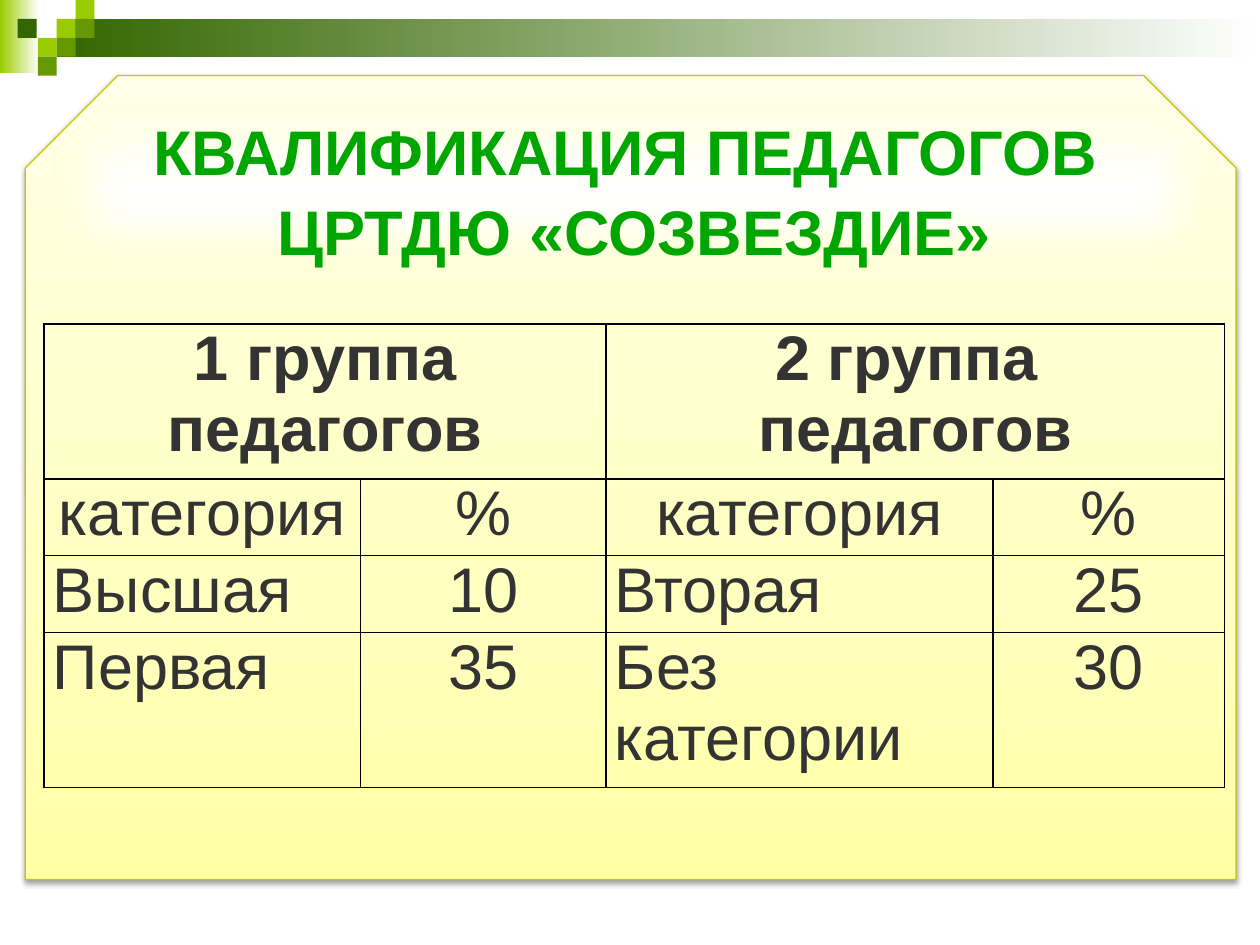
from dataclasses import dataclass
from typing import Optional

from lxml.etree import fromstring
from pptx import Presentation
from pptx.dml.color import RGBColor
from pptx.enum.shapes import MSO_SHAPE as Shape
from pptx.enum.text import MSO_ANCHOR as Anchor, MSO_AUTO_SIZE as AutoSize, PP_ALIGN as Align
from pptx.util import Emu, Inches, Pt

DRAWING_NS = 'xmlns:a="http://schemas.openxmlformats.org/drawingml/2006/main"'


@dataclass(frozen=True)
class Theme:
    """Colours, font and sizes of the slide."""
    lime: str = "99CC00"
    green: str = "669900"
    forest: str = "336600"
    white: str = "FFFFFF"
    panel_line: str = "C8C800"
    panel_stops: tuple = ((0, "FFFFA5"), (35, "FFFFBF"), (100, "FFFFE7"))
    title: str = "00A600"
    title_outline: str = "001F00"
    text: str = "333333"
    border: str = "000000"
    font: str = "Arial"
    size: int = 36


@dataclass(frozen=True)
class Block:
    """A rectangle of the header ornament, fading to white when asked."""
    left: float
    top: float
    width: float
    height: float
    color: str
    fades: bool = False


@dataclass(frozen=True)
class Entry:
    """One table cell's wording and look."""
    text: str
    align: Align = Align.CENTER
    bold: bool = False
    span: int = 1


THEME = Theme()
SQUARE = 0.15
BLOCKS = [
    Block(0, 0, 0.31, 0.58, THEME.lime, True),
    Block(0.45, 0.15, 9.55, 0.3, THEME.forest, True),
] + [
    Block(left, row * SQUARE, SQUARE, SQUARE, color)
    for left, row, color in [
        (0.45, 1, THEME.lime), (0.6, 0, THEME.lime), (0.6, 1, THEME.green),
        (0.3, 2, THEME.lime), (0.14, 1, THEME.forest), (0.45, 2, THEME.green),
        (0.3, 3, THEME.green),
    ]
]
COLUMNS = [2.51, 1.95, 3.07, 1.84]
ROWS = [1.23, 0.61, 0.61, 1.23]
ENTRIES: list[list[Optional[Entry]]] = [
    [Entry("1 группа педагогов", bold=True, span=2), None,
     Entry("2 группа \nпедагогов", bold=True, span=2), None],
    [Entry("категория"), Entry("%")] * 2,
    [Entry("Высшая", Align.LEFT), Entry("10"), Entry("Вторая", Align.LEFT), Entry("25")],
    [Entry("Первая", Align.LEFT), Entry("35"), Entry("Без категории", Align.LEFT), Entry("30")],
]


def drawing_xml(tag: str, attributes: str = "", content: str = ""):
    """Return a DrawingML element."""
    return fromstring(f"<a:{tag} {DRAWING_NS} {attributes}>{content}</a:{tag}>")


def solid_xml(color: str) -> str:
    """Return the markup of a solid fill."""
    return f'<a:solidFill><a:srgbClr val="{color}"/></a:solidFill>'


def apply_gradient(shape, stops: tuple, angle: int) -> None:
    """Fill a new shape with a linear gradient."""
    markup = "".join(
        f'<a:gs pos="{position * 1000}"><a:srgbClr val="{color}"/></a:gs>'
        for position, color in stops
    )
    content = f'<a:gsLst>{markup}</a:gsLst><a:lin ang="{angle * 60000}" scaled="0"/>'
    shape.element.spPr.insert(2, drawing_xml("gradFill", 'rotWithShape="1"', content))


def style_paragraph(paragraph, align: Align, color: str, bold: bool) -> None:
    """Align a paragraph and format its runs."""
    paragraph.alignment = align
    for run in paragraph.runs:
        run.font.name = THEME.font
        run.font.size = Pt(THEME.size)
        run.font.bold = bold
        run.font.color.rgb = RGBColor.from_string(color)


def add_block(slide, block: Block) -> None:
    """Draw one rectangle of the ornament."""
    shape = slide.shapes.add_shape(
        Shape.RECTANGLE, Inches(block.left), Inches(block.top),
        Inches(block.width), Inches(block.height))
    if block.fades:
        apply_gradient(shape, ((0, block.color), (100, THEME.white)), 0)
    else:
        shape.fill.solid()
        shape.fill.fore_color.rgb = RGBColor.from_string(block.color)
    shape.line.fill.background()
    shape.shadow.inherit = False


def add_panel(slide) -> None:
    """Draw the yellow panel with snipped top corners."""
    panel = slide.shapes.add_shape(
        Shape.SNIP_2_SAME_RECTANGLE, Inches(0.2), Inches(0.6), Inches(9.61), Inches(6.38))
    panel.adjustments[0] = 0.115
    panel.adjustments[1] = 0
    apply_gradient(panel, THEME.panel_stops, 270)
    panel.line.color.rgb = RGBColor.from_string(THEME.panel_line)
    panel.line.width = Pt(0.75)
    shadow = (f'<a:outerShdw blurRad="{Pt(3.1)}" dist="{Pt(1.6)}" dir="5400000" rotWithShape="0">'
              '<a:srgbClr val="000000"><a:alpha val="38000"/></a:srgbClr></a:outerShdw>')
    panel.element.spPr.append(drawing_xml("effectLst", content=shadow))


def place_title(slide) -> None:
    """Put the title on a soft white band above the panel."""
    title = slide.shapes.title
    title.element.getparent().append(title.element)
    title.left, title.top = Inches(0.43), Inches(0.84)
    title.width, title.height = Inches(9.21), Inches(1.31)
    title.fill.solid()
    title.fill.fore_color.rgb = RGBColor.from_string(THEME.white)
    title.line.color.rgb = RGBColor.from_string(THEME.green)
    title.line.width = Pt(2)
    soft_edge = f'<a:softEdge rad="{Pt(25)}"/>'
    title.element.spPr.append(drawing_xml("effectLst", content=soft_edge))
    frame = title.text_frame
    frame.text = "КВАЛИФИКАЦИЯ ПЕДАГОГОВ \nЦРТДЮ «СОЗВЕЗДИЕ»"
    frame.auto_size = AutoSize.NONE
    frame.vertical_anchor = Anchor.MIDDLE
    for paragraph in frame.paragraphs:
        paragraph.line_spacing = 1.05
        style_paragraph(paragraph, Align.CENTER, THEME.title, True)
        for run in paragraph.runs:
            outline = drawing_xml("ln", f'w="{Pt(0.71)}"', solid_xml(THEME.title_outline))
            run.font._element.insert(0, outline)


def style_cell(cell) -> None:
    """Give a cell thin borders, narrow margins and no fill."""
    cell.margin_left = cell.margin_right = Inches(0.07)
    cell.margin_top = cell.margin_bottom = Emu(0)
    cell.fill.background()
    properties = cell._tc.get_or_add_tcPr()
    for index, side in enumerate(("lnL", "lnR", "lnT", "lnB")):
        properties.insert(index, drawing_xml(side, f'w="{Pt(1)}"', solid_xml(THEME.border)))


def add_category_table(slide) -> None:
    """Add the table of teachers' categories."""
    table = slide.shapes.add_table(
        len(ROWS), len(COLUMNS), Inches(0.35), Inches(2.57),
        Inches(sum(COLUMNS)), Inches(sum(ROWS))).table
    table.first_row = table.horz_banding = False
    for column, width in zip(table.columns, COLUMNS):
        column.width = Inches(width)
    for row, height in zip(table.rows, ROWS):
        row.height = Inches(height)
    for row_index, entries in enumerate(ENTRIES):
        for column_index, entry in enumerate(entries):
            cell = table.cell(row_index, column_index)
            style_cell(cell)
            if entry is None:
                continue
            if entry.span > 1:
                cell.merge(table.cell(row_index, column_index + entry.span - 1))
            cell.text_frame.text = entry.text
            for paragraph in cell.text_frame.paragraphs:
                style_paragraph(paragraph, entry.align, THEME.text, entry.bold)


def main() -> None:
    """Build and save the slide."""
    presentation = Presentation()
    presentation.slide_width, presentation.slide_height = Inches(10), Inches(7.5)
    slide = presentation.slides.add_slide(presentation.slide_layouts[5])
    for block in BLOCKS:
        add_block(slide, block)
    add_panel(slide)
    place_title(slide)
    add_category_table(slide)
    presentation.save("out.pptx")


if __name__ == "__main__":
    main()
